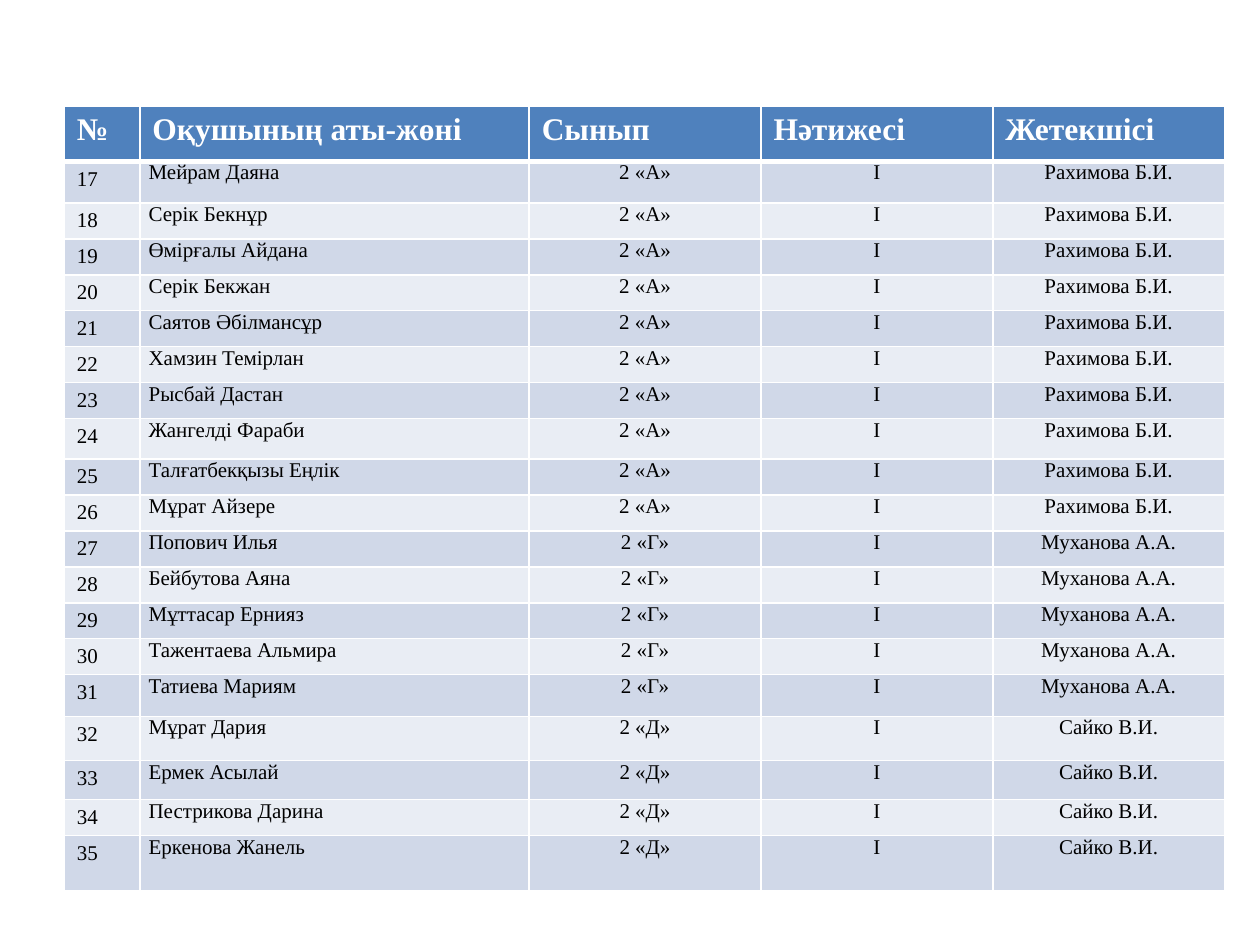
import pptx
import pptx.dml.color
import pptx.enum.text
import pptx.oxml
import pptx.oxml.ns
import pptx.util
from pptx.util import Inches

WHITE = pptx.dml.color.RGBColor(0xFF, 0xFF, 0xFF)
BLACK = pptx.dml.color.RGBColor(0x00, 0x00, 0x00)
HEADER_BLUE = pptx.dml.color.RGBColor(0x4F, 0x81, 0xBD)
DARK_BAND = pptx.dml.color.RGBColor(0xD0, 0xD8, 0xE8)
LIGHT_BAND = pptx.dml.color.RGBColor(0xE9, 0xED, 0xF4)

FONT = "Times New Roman"
FIRST_NUMBER = 17
RESULT = "І"
HEADERS = ["№", "Оқушының аты-жөні", "Сынып", "Нәтижесі", "Жетекшісі"]

# Pupils grouped by class and teacher
GROUPS = [
    ("2 «А»", "Рахимова Б.И.", [
        "Мейрам Даяна", "Серік Бекнұр", "Өмірғалы Айдана", "Серік Бекжан",
        "Саятов Әбілмансұр", "Хамзин Темірлан", "Рысбай Дастан",
        "Жангелді Фараби", "Талғатбекқызы Еңлік", "Мұрат Айзере"]),
    ("2 «Г»", "Муханова А.А.", [
        "Попович Илья", "Бейбутова Аяна", "Мұттасар Ернияз",
        "Тажентаева Альмира", "Татиева Мариям"]),
    ("2 «Д»", "Сайко В.И.", [
        "Мұрат Дария", "Ермек Асылай", "Пестрикова Дарина", "Еркенова Жанель"]),
]
COLUMN_WIDTHS = [0.6, 3.09, 1.84, 1.84, 1.84]
ROW_HEIGHTS = [0.44, 0.33, 0.25, 0.24, 0.23, 0.22, 0.21, 0.2, 0.32, 0.24,
               0.25, 0.27, 0.2, 0.22, 0.15, 0.33, 0.35, 0.31, 0.27, 0.44]


def add_border(cell, side, points):
    """Draw a white line on one side of a cell (L, R, T or B)."""
    line = pptx.oxml.parse_xml(
        f'<a:ln{side} {pptx.oxml.ns.nsdecls("a")} w="{pptx.util.Pt(points)}">'
        f'<a:solidFill><a:srgbClr val="{WHITE}"/></a:solidFill></a:ln{side}>')
    cell._tc.get_or_add_tcPr().append(line)


presentation = pptx.Presentation()
presentation.slide_width = Inches(10)
presentation.slide_height = Inches(7.5)
slide = presentation.slides.add_slide(presentation.slide_layouts[6])

# Table rows: header, then numbered pupils
rows = [HEADERS]
for class_name, teacher, pupils in GROUPS:
    for pupil in pupils:
        number = str(FIRST_NUMBER + len(rows) - 1)
        rows.append([number, pupil, class_name, RESULT, teacher])

# Table grid
table_frame = slide.shapes.add_table(
    len(rows), len(HEADERS), Inches(0.51), Inches(0.84), Inches(9.22), Inches(6.41))
table = table_frame.table
for column, width in zip(table.columns, COLUMN_WIDTHS):
    column.width = Inches(width)
for row, height in zip(table.rows, ROW_HEIGHTS):
    row.height = Inches(height)

# Cells
for row_index, values in enumerate(rows):
    is_header = row_index == 0
    if is_header:
        fill_color = HEADER_BLUE
    else:
        fill_color = DARK_BAND if row_index % 2 else LIGHT_BAND
    for column_index, value in enumerate(values):
        cell = table.cell(row_index, column_index)
        add_border(cell, "L", 1)
        add_border(cell, "R", 1)
        add_border(cell, "T", 3 if row_index == 1 else 1)
        add_border(cell, "B", 3 if is_header else 1)
        cell.fill.solid()
        cell.fill.fore_color.rgb = fill_color

        paragraph = cell.text_frame.paragraphs[0]
        if not is_header and column_index > 0:
            cell.margin_left = cell.margin_right = Inches(0.07)
            cell.margin_top = cell.margin_bottom = 0
            if column_index > 1:
                paragraph.alignment = pptx.enum.text.PP_ALIGN.CENTER

        run = paragraph.add_run()
        run.text = value
        run.font.name = FONT
        run.font.size = pptx.util.Pt(18 if is_header else 12)
        run.font.bold = is_header
        run.font.color.rgb = WHITE if is_header else BLACK

presentation.save("out.pptx")
